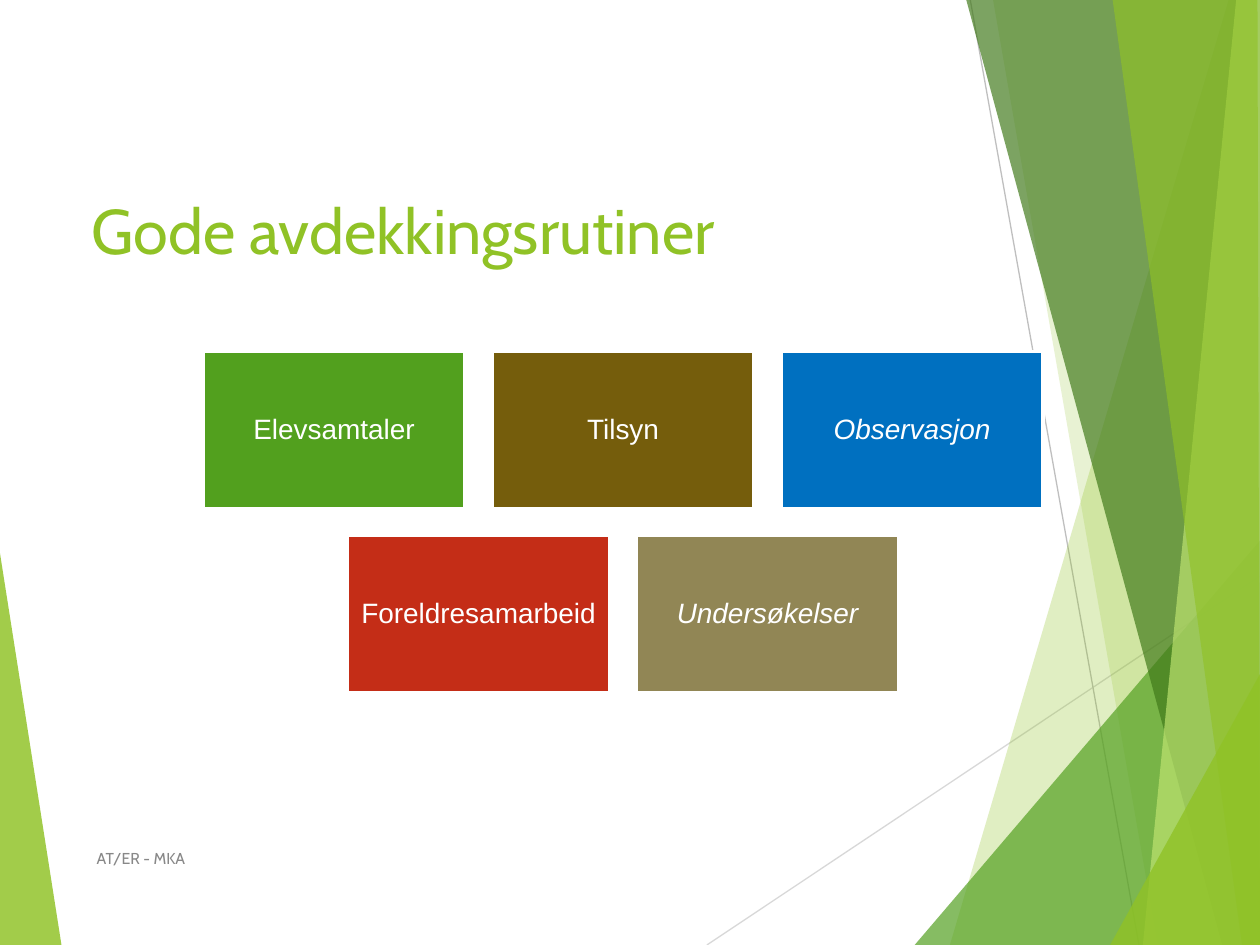
from collections import namedtuple

from lxml import etree
from pptx import Presentation
from pptx.dml.color import RGBColor
from pptx.enum.shapes import MSO_CONNECTOR, MSO_SHAPE
from pptx.enum.text import MSO_ANCHOR, PP_ALIGN
from pptx.oxml.ns import qn
from pptx.util import Cm, Pt

RECTANGLE = MSO_SHAPE.RECTANGLE
STRAIGHT = MSO_CONNECTOR.STRAIGHT
TOP, MIDDLE = MSO_ANCHOR.TOP, MSO_ANCHOR.MIDDLE
LEFT, CENTER = PP_ALIGN.LEFT, PP_ALIGN.CENTER

Box = namedtuple("Box", "left top width height")

COLORS = {
    "lime": "90C226", "green": "54A021", "forest": "3F7818", "pale": "BFE471",
    "line_light": "D8D8D8", "line_dark": "BFBFBF", "white": "FFFFFF", "footer": "888888",
    "leaf": "52A01E", "brown": "755D0C", "blue": "0070C0", "red": "C42D17", "khaki": "918655",
}

SLIDE = Box(0, 0, 25.4, 19.05)
LEFT_SHARD = ("lime", 83, [(0, 11.15), (1.24, 19.05), (0, 19.05)])
RAYS = [
    ("line_light", (14.25, 19.05), (25.4, 11.61)),
    ("line_dark", (19.56, 0), (22.96, 19.05)),
]
RIGHT_SHARDS = [
    ("lime", 28, [(24.77, 0), (19.15, 19.05), (25.4, 19.05), (25.4, 0)]),
    ("lime", 20, [(20.02, 0), (23.34, 19.05), (25.4, 19.05), (25.4, 0)]),
    ("green", 70, [(18.44, 19.05), (25.4, 10.9), (25.4, 19.05)]),
    ("forest", 68, [(19.48, 0), (24.64, 19.05), (25.4, 19.05), (25.4, 0)]),
    ("pale", 68, [(24.92, 0), (23.04, 19.05), (25.4, 19.05), (25.4, 0)]),
    ("lime", 63, [(22.43, 0), (25.04, 19.05), (25.4, 19.05), (25.35, 0)]),
    ("lime", 80, [(22.38, 19.05), (25.4, 13.59), (25.4, 19.05)]),
]
CARD_ROWS = [
    [("Elevsamtaler", "leaf", False), ("Tilsyn", "brown", False), ("Observasjon", "blue", True)],
    [("Foreldresamarbeid", "red", False), ("Undersøkelser", "khaki", True)],
]


def color(name):
    """Return the named colour."""
    return RGBColor.from_string(COLORS[name])


def place(shape, box):
    """Move and size a shape to fill a box."""
    shape.left, shape.top, shape.width, shape.height = map(Cm, box)


def write(shape, text, font, size, tint, align=LEFT, anchor=MIDDLE, inset=0.25, italic=None):
    """Write one formatted line of text in a shape."""
    frame = shape.text_frame
    frame.word_wrap = True
    frame.vertical_anchor = anchor
    frame.margin_left = frame.margin_right = Cm(inset)
    frame.margin_top = frame.margin_bottom = Cm(inset)
    para = frame.paragraphs[0]
    para.alignment = align
    span = para.add_run()
    span.text = text
    span.font.name, span.font.size, span.font.italic = font, Pt(size), italic
    span.font.color.rgb = color(tint)
    return para


def draw_shard(page, box, tint, opacity, points):
    """Draw one translucent polygon relative to the box."""
    corners = [(100 * (box.left + x), 100 * (box.top + y)) for x, y in points]
    builder = page.shapes.build_freeform(*corners[0], scale=Cm(0.01))
    builder.add_line_segments(corners[1:], close=True)
    shard = builder.convert_to_shape()
    shard.shadow.inherit = False
    shard.fill.solid()
    shard.fill.fore_color.rgb = color(tint)
    shard.line.fill.background()
    tint_node = shard.element.spPr.find(qn("a:solidFill"))[0]
    etree.SubElement(tint_node, qn("a:alpha"), val=str(opacity * 1000))


def draw_ray(page, box, tint, start, end):
    """Draw one thin line relative to the box."""
    ends = [Cm(edge + offset) for point in (start, end) for edge, offset in zip(box[:2], point)]
    ray = page.shapes.add_connector(STRAIGHT, *ends)
    ray.line.color.rgb = color(tint)
    ray.line.width = Pt(0.75)
    etree.SubElement(ray.element.spPr, qn("a:effectLst"))


def draw_backdrop(page, box):
    """Draw the shards and rays that frame the page."""
    draw_shard(page, box, *LEFT_SHARD)
    for ray in RAYS:
        draw_ray(page, box, *ray)
    for shard in RIGHT_SHARDS:
        draw_shard(page, box, *shard)


def draw_title(page, box):
    """Place the title in front of the backdrop."""
    title = page.shapes.title
    title.element.getparent().append(title.element)
    place(title, box)
    write(title, "Gode avdekkingsrutiner", "Cabin", 36, "lime", anchor=TOP)


def draw_card(page, box, text, tint, italic):
    """Draw one filled card with a centred label."""
    card = page.shapes.add_shape(RECTANGLE, *map(Cm, box))
    card.shadow.inherit = False
    card.fill.solid()
    card.fill.fore_color.rgb = color(tint)
    card.line.color.rgb = color("white")
    card.line.width = Pt(2)
    para = write(card, text, "Arial", 16, "white", CENTER, inset=0.17, italic=italic)
    para.line_spacing = 0.9


def draw_cards(page, box, gap=0.54):
    """Lay out the rows of equal cards, each row centred in the box."""
    columns = max(map(len, CARD_ROWS))
    width = (box.width - (columns - 1) * gap) / columns
    height = (box.height - (len(CARD_ROWS) - 1) * gap) / len(CARD_ROWS)
    for row, cards in enumerate(CARD_ROWS):
        indent = (columns - len(cards)) * (width + gap) / 2
        top = box.top + row * (height + gap)
        for column, card in enumerate(cards):
            left = box.left + indent + column * (width + gap)
            draw_card(page, Box(left, top, width, height), *card)


def draw_footer(page, box):
    """Write the footer line."""
    footer = page.shapes.add_textbox(*map(Cm, box))
    write(footer, "AT/ER - MKA", "Cabin", 9, "footer")


def main():
    """Build and save the deck."""
    deck = Presentation()
    deck.slide_width, deck.slide_height = Cm(SLIDE.width), Cm(SLIDE.height)
    page = deck.slides.add_slide(deck.slide_layouts[5])
    draw_backdrop(page, SLIDE)
    draw_title(page, Box(1.6, 3.61, 21.89, 2.77))
    draw_cards(page, Box(4.09, 7.09, 16.94, 6.88))
    draw_footer(page, Box(1.7, 16.79, 12.85, 1.02))
    deck.save("out.pptx")


if __name__ == "__main__":
    main()
